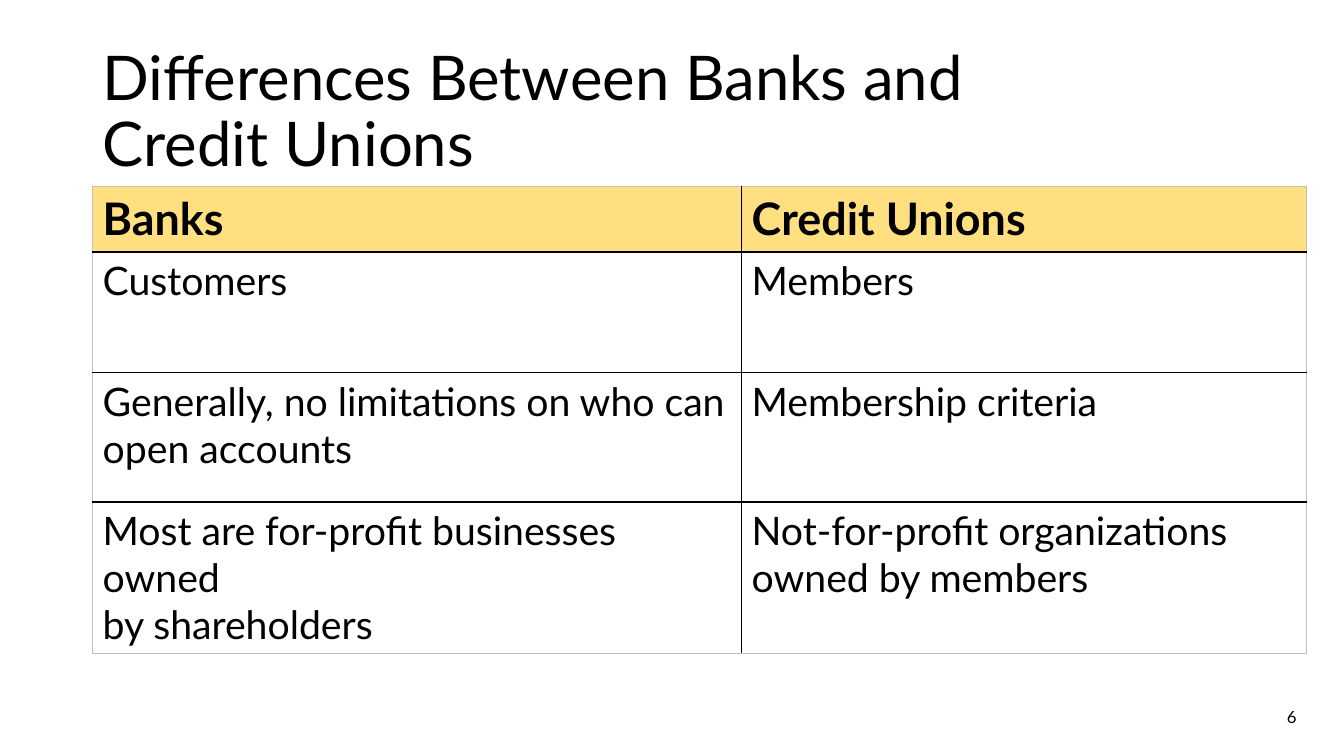
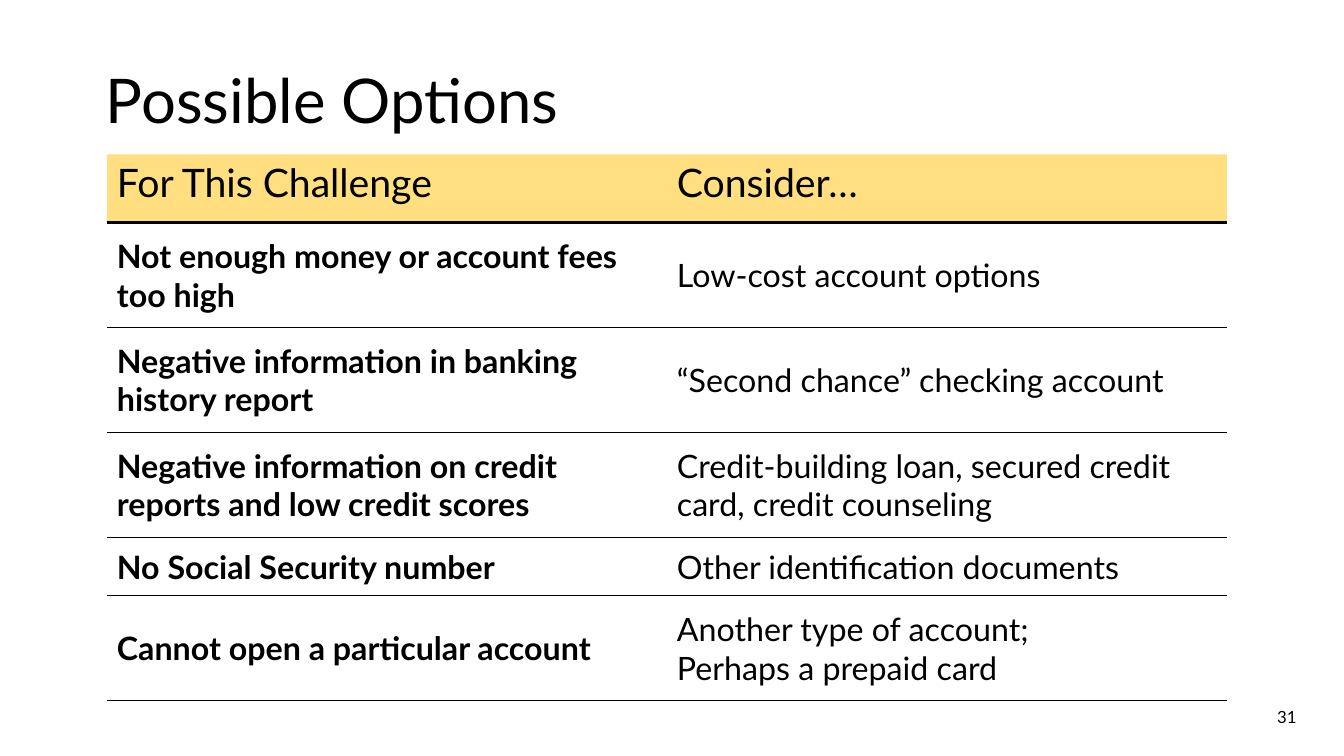
from dataclasses import dataclass

from lxml.etree import SubElement
from pptx import Presentation
from pptx.dml.color import RGBColor
from pptx.enum.text import MSO_ANCHOR, PP_ALIGN
from pptx.oxml.ns import qn
from pptx.slide import Slide
from pptx.table import _Cell
from pptx.text.text import TextFrame
from pptx.util import Pt

FONT = "Lato"
BLACK = RGBColor(0x00, 0x00, 0x00)
GREY = RGBColor(0xC0, 0xC0, 0xC0)
GOLD = RGBColor(0xFF, 0xC0, 0x00)
HEADER_ALPHA = "50000"
TITLE_ONLY = 5


@dataclass(frozen=True)
class Rule:
    """A table line; a width of zero draws nothing."""
    width: float
    color: RGBColor = BLACK


NONE, HAIRLINE, THIN, THICK = Rule(0), Rule(0.5, GREY), Rule(1), Rule(3)


@dataclass(frozen=True)
class TextStyle:
    size: float
    bold: bool = False
    space_after: float = 0
    anchor: MSO_ANCHOR = MSO_ANCHOR.TOP


@dataclass(frozen=True)
class Comparison:
    """One slide: a title above a two-column table."""
    title: str
    title_at: tuple[float, float]
    number: int
    table_at: tuple[float, float]
    columns: tuple[float, ...]
    row_heights: tuple[float, ...]
    rows: tuple[tuple[str, str], ...]
    header: TextStyle
    body: tuple[TextStyle, TextStyle]
    horizontal: tuple[Rule, ...]
    vertical: tuple[Rule, ...]


BANK_BODY = TextStyle(28, space_after=12)

COMPARISONS = (
    Comparison(
        title="Differences Between Banks and\vCredit Unions",
        title_at=(66.2, 28.8),
        number=6,
        table_at=(66.2, 133.2),
        columns=(463.6, 403.4),
        row_heights=(46.8, 86, 92.6, 98.6),
        rows=(
            ("Banks", "Credit Unions"),
            ("Customers", "Members"),
            ("Generally, no limitations on who can open accounts",
             "Membership criteria"),
            ("Most are for-profit businesses owned\vby shareholders",
             "Not-for-profit organizations owned by members"),
        ),
        header=TextStyle(32, bold=True),
        body=(BANK_BODY, BANK_BODY),
        horizontal=(HAIRLINE, THIN, THIN, THIN, HAIRLINE),
        vertical=(HAIRLINE, THIN, HAIRLINE),
    ),
    Comparison(
        title="Possible Options",
        title_at=(68.4, 21.6),
        number=31,
        table_at=(76.3, 110.2),
        columns=(400, 400),
        row_heights=(48.8, 75, 75, 75, 41.5, 75),
        rows=(
            ("For This Challenge", "Consider…"),
            ("Not enough money or account fees too high",
             "Low-cost account options"),
            ("Negative information in banking history report",
             "“Second chance” checking account"),
            ("Negative information on credit reports and low credit scores",
             "Credit-building loan, secured credit card, credit counseling"),
            ("No Social Security number", "Other identification documents"),
            ("Cannot open a particular account",
             "Another type of account;\nPerhaps a prepaid card"),
        ),
        header=TextStyle(28),
        body=(TextStyle(23, bold=True, anchor=MSO_ANCHOR.MIDDLE),
              TextStyle(23, anchor=MSO_ANCHOR.MIDDLE)),
        horizontal=(NONE, THICK, THIN, THIN, THIN, THIN, THIN),
        vertical=(NONE, NONE, NONE),
    ),
)


def format_text(frame: TextFrame, style: TextStyle,
                align: PP_ALIGN = PP_ALIGN.LEFT) -> None:
    for paragraph in frame.paragraphs:
        paragraph.alignment = align
        if style.space_after:
            paragraph.space_after = Pt(style.space_after)
        for run in paragraph.runs:
            run.font.name = FONT
            run.font.size = Pt(style.size)
            run.font.bold = style.bold
            run.font.color.rgb = BLACK


def set_border(cell: _Cell, side: str, rule: Rule) -> None:
    line = SubElement(cell._tc.get_or_add_tcPr(), qn(f"a:ln{side}"),
                      w=str(int(Pt(rule.width))))
    if rule.width:
        fill = SubElement(line, qn("a:solidFill"))
        SubElement(fill, qn("a:srgbClr"), val=str(rule.color))
    else:
        SubElement(line, qn("a:noFill"))


def fill_header(cell: _Cell) -> None:
    cell.fill.solid()
    cell.fill.fore_color.rgb = GOLD
    tint = cell._tc.tcPr.find(f"{qn('a:solidFill')}/{qn('a:srgbClr')}")
    SubElement(tint, qn("a:alpha"), val=HEADER_ALPHA)


def add_title(slide: Slide, text: str, at: tuple[float, float]) -> None:
    title = slide.shapes.title
    title.left, title.top = (Pt(value) for value in at)
    title.width, title.height = Pt(828), Pt(104.4)
    frame = title.text_frame
    frame.text = text
    frame.word_wrap = True
    frame.vertical_anchor = MSO_ANCHOR.MIDDLE
    format_text(frame, TextStyle(44))
    frame.paragraphs[0].line_spacing = 0.9


def add_comparison_table(slide: Slide, content: Comparison) -> None:
    left, top = content.table_at
    table = slide.shapes.add_table(
        len(content.rows), len(content.columns), Pt(left), Pt(top),
        Pt(sum(content.columns)), Pt(sum(content.row_heights))).table
    table.horz_banding = False
    for column, width in zip(table.columns, content.columns):
        column.width = Pt(width)
    for row, height in zip(table.rows, content.row_heights):
        row.height = Pt(height)

    for r, texts in enumerate(content.rows):
        for c, text in enumerate(texts):
            cell = table.cell(r, c)
            style = content.body[c] if r else content.header
            cell.text_frame.text = text
            cell.vertical_anchor = style.anchor
            format_text(cell.text_frame, style)
            # Neighbouring cells share the rule on their common edge
            set_border(cell, "L", content.vertical[c])
            set_border(cell, "R", content.vertical[c + 1])
            set_border(cell, "T", content.horizontal[r])
            set_border(cell, "B", content.horizontal[r + 1])
            if r:
                cell.fill.background()
            else:
                fill_header(cell)


def add_page_number(slide: Slide, number: int) -> None:
    frame = slide.shapes.add_textbox(
        Pt(671.8), Pt(497.5), Pt(261.4), Pt(28.8)).text_frame
    frame.text = str(number)
    frame.word_wrap = True
    frame.vertical_anchor = MSO_ANCHOR.MIDDLE
    format_text(frame, TextStyle(12), PP_ALIGN.RIGHT)


def main() -> None:
    deck = Presentation()
    deck.slide_width, deck.slide_height = Pt(960), Pt(540)
    for content in COMPARISONS:
        slide = deck.slides.add_slide(deck.slide_layouts[TITLE_ONLY])
        add_title(slide, content.title, content.title_at)
        add_comparison_table(slide, content)
        add_page_number(slide, content.number)
    deck.save("out.pptx")


if __name__ == "__main__":
    main()
